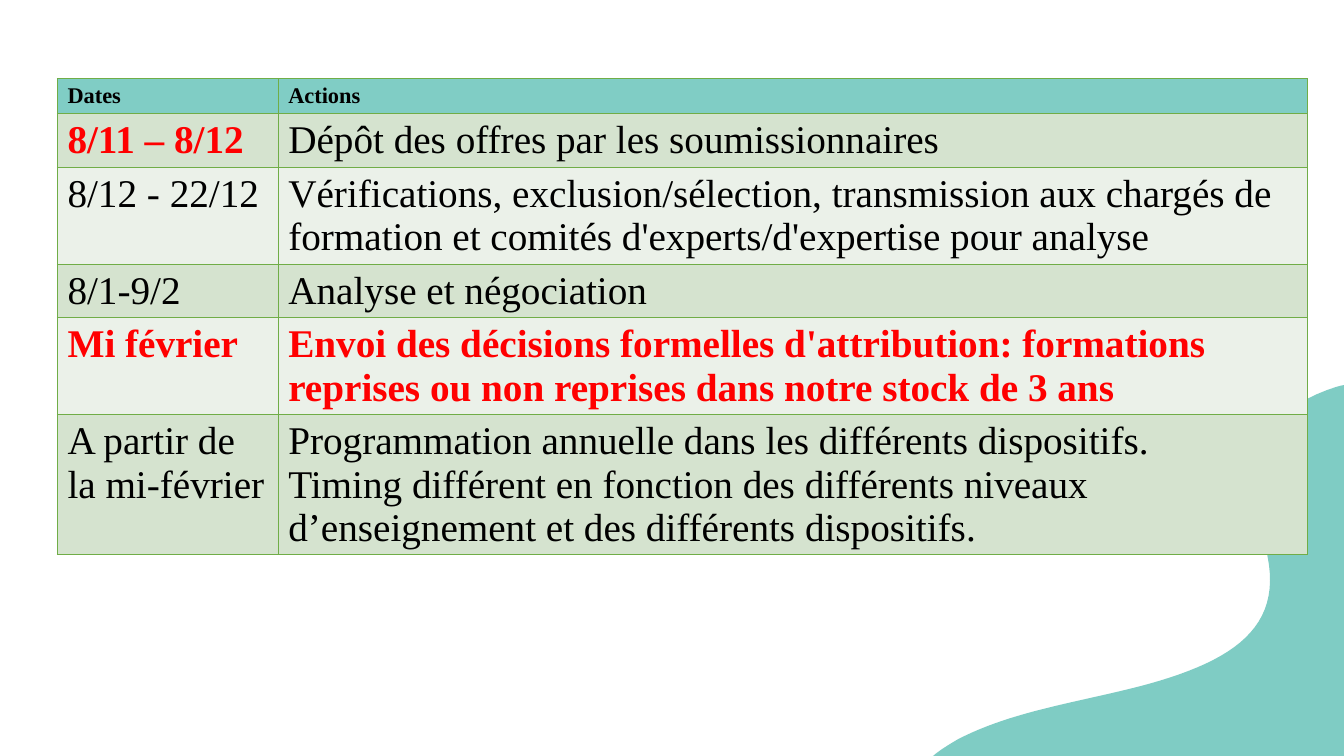
from lxml import etree
from pptx import Presentation
from pptx.dml.color import RGBColor
from pptx.oxml.ns import qn
from pptx.util import Inches, Pt

TEAL = RGBColor(0x55, 0xBC, 0xB1)
HEAD = RGBColor(0x80, 0xCD, 0xC5)
DARK = RGBColor(0xD5, 0xE3, 0xCF)
PALE = RGBColor(0xEB, 0xF1, 0xE9)
GREEN = RGBColor(0x70, 0xAD, 0x47)
RED = RGBColor(0xFF, 0x00, 0x00)
BLACK = RGBColor(0x00, 0x00, 0x00)
FONT = "Times New Roman"
STEPS = 24


def curve(a, b, c, d):
    """Points along a cubic curve, without its start."""
    for n in range(1, STEPS + 1):
        t = n / STEPS
        u = 1 - t
        yield tuple(u**3 * p + 3 * u * u * t * q + 3 * u * t * t * r + t**3 * s
                    for p, q, r, s in zip(a, b, c, d))


def edge(props, side, place):
    """Add one cell border."""
    line = etree.Element(qn("a:" + side), w=str(Pt(1)))
    fill = etree.SubElement(line, qn("a:solidFill"))
    etree.SubElement(fill, qn("a:srgbClr"), val=str(GREEN))
    props.insert(place, line)


prs = Presentation()
prs.slide_width, prs.slide_height = Inches(13.33), Inches(7.5)
slide = prs.slides.add_slide(prs.slide_layouts[6])

# Teal wave in the corner
bends = [
    ((13.27, 3.83), (13.22, 3.85), (13.16, 3.87)),
    ((12.3, 4.19), (12.44, 4.86), (12.57, 5.51)),
    ((12.72, 6.23), (12.22, 6.55), (11.41, 6.78)),
    ((10.76, 6.96), (10.06, 7.04), (9.49, 7.34)),
    ((9.39, 7.4), (9.29, 7.46), (9.21, 7.54)),
]
dots = [(13.33, 3.82)]
for bend in bends:
    dots.extend(curve(dots[-1], *bend))
pen = slide.shapes.build_freeform(Inches(13.33), Inches(7.54))
pen.add_line_segments([(Inches(x), Inches(y)) for x, y in dots], close=True)
wave = pen.convert_to_shape()
wave.shadow.inherit = False
wave.fill.solid()
wave.fill.fore_color.rgb = TEAL
wave.line.fill.background()
tint = wave.fill._xPr.find(qn("a:solidFill"))[0]
etree.SubElement(tint, qn("a:alpha"), val="75000")

# Calendar: height, date, actions, highlighted
rows = [
    (0.35, "Dates", ["Actions"], False),
    (0.53, "8/11 – 8/12", ["Dépôt des offres par les soumissionnaires"], False),
    (0.96, "8/12 - 22/12", ["Vérifications, exclusion/sélection, transmission aux "
     "chargés de formation et comités d'experts/d'expertise pour analyse"], False),
    (0.53, "8/1-9/2", ["Analyse et négociation"], False),
    (0.96, "Mi février", ["Envoi des décisions formelles d'attribution: formations "
     "reprises ou non reprises dans notre stock de 3 ans"], True),
    (1.39, "A partir de la mi-février",
     ["Programmation annuelle dans les différents dispositifs.",
      "Timing différent en fonction des différents niveaux "
      "d’enseignement et des différents dispositifs."], False),
]
cols = [2.19, 10.21]
high = sum(row[0] for row in rows)
table = slide.shapes.add_table(len(rows), len(cols), Inches(0.57), Inches(0.78),
                               Inches(sum(cols)), Inches(high)).table
for col, wide in zip(table.columns, cols):
    col.width = Inches(wide)

for i, (tall, date, acts, hot) in enumerate(rows):
    table.rows[i].height = Inches(tall)
    for j, lines in enumerate([[date], acts]):
        cell = table.cell(i, j)
        cell.fill.solid()
        cell.fill.fore_color.rgb = HEAD if i == 0 else DARK if i % 2 else PALE
        props = cell._tc.get_or_add_tcPr()
        for place, side in enumerate(["lnL", "lnR", "lnT", "lnB"]):
            edge(props, side, place)

        # The opening date is red, its action is not
        red = hot or (i == 1 and j == 0)
        frame = cell.text_frame
        for n, line in enumerate(lines):
            para = frame.add_paragraph() if n else frame.paragraphs[0]
            run = para.add_run()
            run.text = line
            run.font.name = FONT
            run.font.size = Pt(28 if i else 16)
            run.font.bold = red or i == 0
            run.font.color.rgb = RED if red else BLACK

prs.save("out.pptx")
